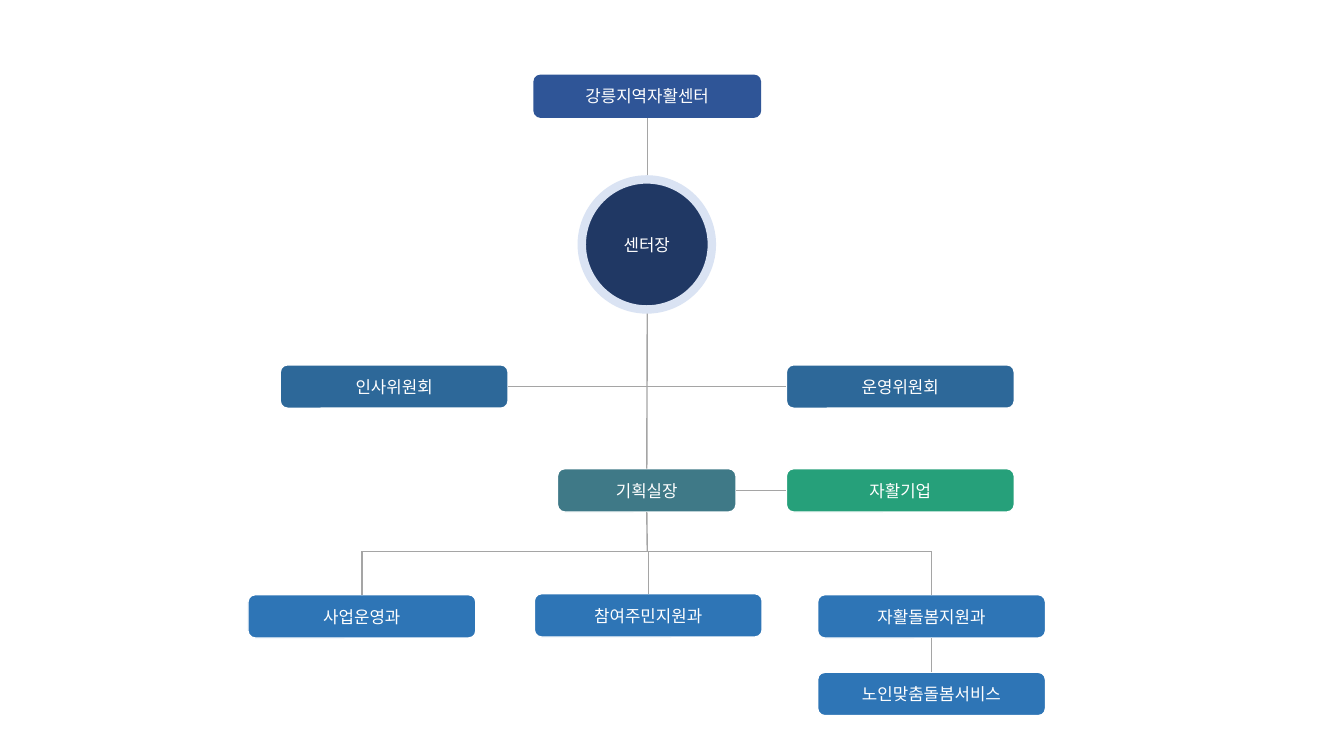
from lxml.etree import SubElement
from pptx import Presentation
from pptx.dml.color import RGBColor
from pptx.enum.shapes import MSO_CONNECTOR, MSO_SHAPE
from pptx.enum.text import MSO_ANCHOR, PP_ALIGN
from pptx.oxml.ns import qn
from pptx.util import Inches, Pt

WHITE = RGBColor(0xFF, 0xFF, 0xFF)
GRAY = RGBColor(0xA5, 0xA5, 0xA5)
ROYAL = RGBColor(0x2F, 0x55, 0x97)
NAVY = RGBColor(0x20, 0x38, 0x64)
PALE = RGBColor(0xDA, 0xE3, 0xF3)
STEEL = RGBColor(0x2D, 0x68, 0x99)
TEAL = RGBColor(0x3F, 0x79, 0x87)
GREEN = RGBColor(0x26, 0xA0, 0x7A)
BLUE = RGBColor(0x2E, 0x75, 0xB6)
TOP, LEFT, BOTTOM, RIGHT = range(4)


def write_text(frame, text, font="Noto Sans CJK KR", size=12, color=WHITE):
    frame.vertical_anchor = MSO_ANCHOR.MIDDLE
    frame.word_wrap = True
    paragraph = frame.paragraphs[0]
    paragraph.alignment = PP_ALIGN.CENTER
    run = paragraph.add_run()
    run.text = text
    run.font.name = font
    run.font.size = Pt(size)
    run.font.color.rgb = color
    SubElement(run.font._element, qn("a:ea"), typeface=font)


class OrgChart:
    """Draws the boxes and links of an organisation chart on one slide."""

    def __init__(self, slide, box_width=2.26, box_height=0.43):
        self.slide = slide
        self.box_width = box_width
        self.box_height = box_height

    def node(self, kind, text, bounds, fill, border, border_width):
        node = self.slide.shapes.add_shape(kind, *map(Inches, bounds))
        node.shadow.inherit = False
        node.fill.solid()
        node.fill.fore_color.rgb = fill
        if border is None:
            node.line.fill.background()
        else:
            node.line.color.rgb = border
            node.line.width = Pt(border_width)
        write_text(node.text_frame, text)
        return node

    def box(self, text, left, top, fill, width=None, border=WHITE):
        bounds = left, top, width or self.box_width, self.box_height
        return self.node(MSO_SHAPE.ROUNDED_RECTANGLE, text, bounds, fill, border, 1)

    def circle(self, text, left, top, diameter, fill, border):
        bounds = left, top, diameter, diameter
        return self.node(MSO_SHAPE.OVAL, text, bounds, fill, border, 6)

    def link(self, start, end, start_box=None, end_box=None):
        link = self.slide.shapes.add_connector(
            MSO_CONNECTOR.STRAIGHT, *map(Inches, start + end))
        if start_box:
            link.begin_connect(*start_box)
        if end_box:
            link.end_connect(*end_box)
        link.line.color.rgb = GRAY
        link.line.width = Pt(1)
        SubElement(link._element.spPr, qn("a:effectLst"))


def main():
    presentation = Presentation()
    presentation.slide_width = Inches(13.33)
    presentation.slide_height = Inches(7.5)
    chart = OrgChart(presentation.slides.add_slide(presentation.slide_layouts[6]))

    axis, bus = 6.42, 5.47
    center = chart.box("강릉지역자활센터", 5.29, 0.74, ROYAL, border=None)
    planning = chart.box("기획실장", 5.53, 4.65, TEAL, width=1.77)
    chart.link((axis, 1.17), (axis, 1.78), start_box=(center, BOTTOM))
    chart.link((axis, 3.07), (axis, 4.65), end_box=(planning, TOP))
    chart.circle("센터장", 5.77, 1.78, 1.29, NAVY, PALE)

    personnel = chart.box("인사위원회", 2.78, 3.62, STEEL)
    steering = chart.box("운영위원회", 7.8, 3.62, STEEL)
    chart.link((5.03, 3.84), (7.8, 3.84), (personnel, RIGHT), (steering, LEFT))

    enterprise = chart.box("자활기업", 7.8, 4.65, GREEN)
    chart.link((7.3, 4.87), (7.8, 4.87), (planning, RIGHT), (enterprise, LEFT))

    chart.link((axis, bus), (axis, 5.08), end_box=(planning, BOTTOM))
    chart.link((3.59, bus), (9.24, bus))
    departments = [("사업운영과", 2.46, 5.9), ("참여주민지원과", 5.3, 5.89),
                   ("자활돌봄지원과", 8.11, 5.9)]
    for name, left, top in departments:
        department = chart.box(name, left, top, BLUE)
        middle = left + chart.box_width / 2
        chart.link((middle, top), (middle, bus), start_box=(department, TOP))

    elder_care = chart.box("노인맞춤돌봄서비스", 8.11, 6.67, BLUE)
    chart.link((9.24, 6.67), (9.24, 6.33), (elder_care, TOP), (department, BOTTOM))

    presentation.save("out.pptx")


if __name__ == "__main__":
    main()
